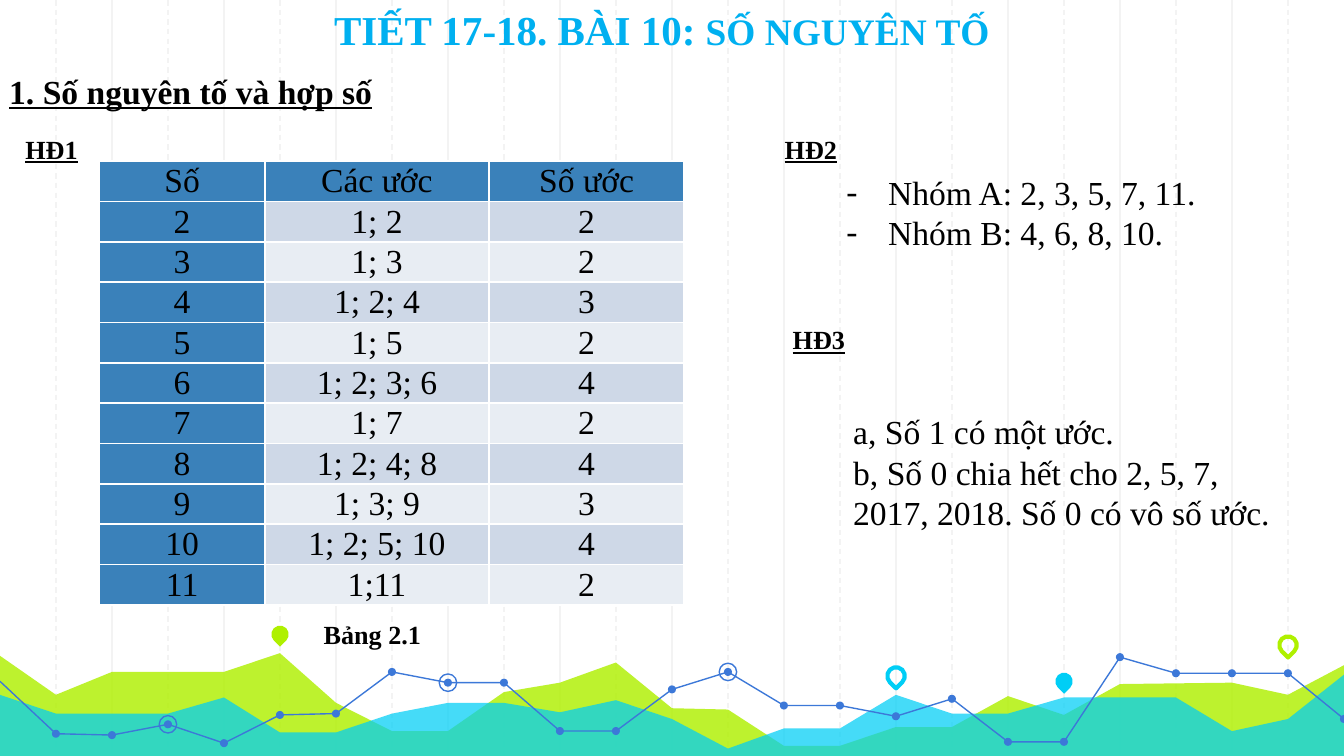
from pptx import Presentation, util as u
from pptx.dml.color import RGBColor
from pptx.enum import dml, shapes, text
from pptx.oxml import ns
from lxml import etree

WIDTH = 10
HEIGHT = WIDTH * 9 / 16
STEP = WIDTH / 24  # spacing of the vertical grid, in inches
FONT = "Times New Roman"

BLACK = RGBColor(0, 0, 0)
WHITE = RGBColor(0xFF, 0xFF, 0xFF)
GRID = RGBColor(0xF3, 0xF3, 0xF3)
LIME = RGBColor(0xAF, 0xF0, 0x00)
CYAN = RGBColor(0x00, 0xCE, 0xF6)
BLUE = RGBColor(0x3C, 0x78, 0xD8)
TITLE = RGBColor(0x00, 0xB0, 0xF0)
HEAD = RGBColor(0x3A, 0x81, 0xBA)
BANDS = RGBColor(0xE8, 0xED, 0xF3), RGBColor(0xCE, 0xD8, 0xE7)

# Content
TITLE_SPANS = [("TIẾT 17-18. BÀI 10: ", 22), ("SỐ NGUYÊN TỐ", 20)]
ROWS = [
    ("Số", "Các ước", "Số ước"),
    ("2", "1; 2", "2"), ("3", "1; 3", "2"), ("4", "1; 2; 4", "3"),
    ("5", "1; 5", "2"), ("6", "1; 2; 3; 6", "4"), ("7", "1; 7", "2"),
    ("8", "1; 2; 4; 8", "4"), ("9", "1; 3; 9", "3"),
    ("10", "1; 2; 5; 10", "4"), ("11", "1;11", "2"),
]
COLUMNS = [1.23, 1.67, 1.45]
ROW_HEIGHT = 0.3

# lines, (left, top, width, height), size, bold, underlined, bulleted
NOTES = [
    (["1. Số nguyên tố và hợp số"], (-0.03, 0.48, 3.68, 0.4), 18, True, True, False),
    (["HĐ1"], (0.09, 0.94, 0.71, 0.4), 14, True, True, False),
    (["HĐ2"], (5.74, 0.94, 0.71, 0.4), 14, True, True, False),
    (["HĐ3"], (5.8, 2.36, 0.61, 0.34), 14, True, True, False),
    (["Bảng 2.1"], (2.31, 4.55, 1.35, 0.34), 14, True, False, False),
    (["Nhóm A: 2, 3, 5, 7, 11.", "Nhóm B: 4, 6, 8, 10."],
     (6.2, 1.23, 3.07, 0.71), 18, False, False, True),
    (["a, Số 1 có một ước.",
      "b, Số 0 chia hết cho 2, 5, 7, 2017, 2018. Số 0 có vô số ước."],
     (6.25, 3.01, 3.48, 1.01), 18, False, False, False),
]

# Landscape: heights by grid step
LIME_HILLS = {0: 4.88, 1: 5.17, 2: 5, 4: 5, 5: 4.86, 6: 5.23, 7: 5.44, 8: 5.44,
              9: 5.15, 10: 5.08, 11: 4.93, 12: 5.27, 13: 5.28, 14: 5.55,
              15: 5.55, 16: 5.41, 17: 5.41, 18: 5.18, 19: 5.32, 20: 5.09,
              22: 5.08, 23: 5.17, 24: 4.95}
CYAN_HILLS = {0: 5.17, 1: 5.31, 3: 5.31, 4: 5.19, 5: 5.45, 6: 5.45, 7: 5.31,
              8: 5.23, 9: 5.23, 10: 5.3, 11: 5.21, 12: 5.35, 13: 5.57,
              14: 5.42, 15: 5.42, 16: 5.17, 17: 5.31, 18: 5.31, 19: 5.19,
              21: 5.19, 22: 5.44, 23: 5.35, 24: 5.02}
TRAIL = [5.07, 5.46, 5.47, 5.39, 5.53, 5.32, 5.31, 5, 5.08, 5.08, 5.44, 5.44,
         5.13, 5, 5.25, 5.25, 5.33, 5.2, 5.52, 5.52, 4.89, 5.01, 5.01, 5.01, 5.35]
TRAIL_BREAKS = [0, 11, 20, 24]
RINGS = [3, 8, 13]
PINS = [(5, 4.72, LIME, True), (16, 5.03, CYAN, False),
        (19, 5.07, CYAN, True), (23, 4.8, LIME, False)]


def inches(*lengths):
    return [u.Inches(length) for length in lengths]


def paint(shape, fill=None, line=None, weight=0.75):
    shape.shadow.inherit = False
    if fill is None:
        shape.fill.background()
    else:
        shape.fill.solid()
        shape.fill.fore_color.rgb = fill
    if line is None:
        shape.line.fill.background()
    else:
        shape.line.color.rgb = line
        shape.line.width = u.Pt(weight)


def add_outline(page, points, close):
    corners = [inches(*point) for point in points]
    builder = page.shapes.build_freeform(*corners[0], scale=1.0)
    builder.add_line_segments(corners[1:], close=close)
    return builder.convert_to_shape()


def add_centred(page, kind, step, y, size):
    return page.shapes.add_shape(
        kind, *inches(step * STEP - size / 2, y - size / 2, size, size))


def set_font(font, size, color=BLACK, bold=False, underline=False):
    font.name, font.size, font.bold = FONT, u.Pt(size), bold
    font.underline = underline
    font.color.rgb = color


def add_dash_bullet(para):
    properties = para._p.get_or_add_pPr()
    properties.set("marL", str(u.Inches(0.31)))
    properties.set("indent", str(-u.Inches(0.31)))
    properties.insert(0, etree.Element(ns.qn("a:buFont"), typeface=FONT))
    properties.insert(1, etree.Element(ns.qn("a:buChar"), char="-"))


def add_borders(cell):
    properties = cell._tc.get_or_add_tcPr()
    for side in ("a:lnL", "a:lnR", "a:lnT", "a:lnB"):
        line = etree.SubElement(properties, ns.qn(side), w=str(u.Pt(1)))
        solid = etree.SubElement(line, ns.qn("a:solidFill"))
        etree.SubElement(solid, ns.qn("a:srgbClr"), val=str(WHITE))


def draw_background(page):
    # Grid: even steps solid, odd steps dashed
    for step in [*range(2, 24, 2), *range(1, 24, 2)]:
        line = page.shapes.add_connector(
            shapes.MSO_CONNECTOR.STRAIGHT,
            *inches(step * STEP, 0, step * STEP, HEIGHT))
        line.line.color.rgb = GRID
        line.line.width = u.Pt(0.75)
        if step % 2:
            line.line.dash_style = dml.MSO_LINE.DASH
        etree.SubElement(line.element.spPr, ns.qn("a:effectLst"))

    # Translucent hills
    for hills, color, opacity in ((LIME_HILLS, LIME, 82), (CYAN_HILLS, CYAN, 73)):
        ridge = [(step * STEP, y) for step, y in hills.items()]
        area = add_outline(page, ridge + [(WIDTH, HEIGHT), (0, HEIGHT)], True)
        paint(area, fill=color)
        tint = area.element.spPr.find(".//" + ns.qn("a:srgbClr"))
        etree.SubElement(tint, ns.qn("a:alpha"), val=str(opacity * 1000))

    # Map pins
    for step, y, color, solid in PINS:
        pin = add_centred(page, shapes.MSO_SHAPE.TEAR, step, y, 0.13)
        pin.rotation = 135
        if solid:
            paint(pin, fill=color)
        else:
            paint(pin, line=color, weight=2.25)

    # Trail with dots and rings
    for first, last in zip(TRAIL_BREAKS, TRAIL_BREAKS[1:]):
        points = [(step * STEP, TRAIL[step]) for step in range(first, last + 1)]
        paint(add_outline(page, points, False), line=BLUE)
    for step in range(1, len(TRAIL)):
        paint(add_centred(page, shapes.MSO_SHAPE.OVAL, step, TRAIL[step], 0.06), fill=BLUE)
    for step in RINGS:
        paint(add_centred(page, shapes.MSO_SHAPE.OVAL, step, TRAIL[step], 0.13), line=BLUE)


def add_divisor_table(page):
    frame = page.shapes.add_table(
        len(ROWS), len(COLUMNS),
        *inches(0.74, 1.2, sum(COLUMNS), ROW_HEIGHT * len(ROWS)))
    table = frame.table
    for column, width in zip(table.columns, COLUMNS):
        column.width = u.Inches(width)
    for r, words in enumerate(ROWS):
        table.rows[r].height = u.Inches(ROW_HEIGHT)
        for c, word in enumerate(words):
            cell = table.cell(r, c)
            add_borders(cell)
            cell.fill.solid()
            cell.fill.fore_color.rgb = HEAD if r == 0 or c == 0 else BANDS[r % 2]
            cell.margin_left = cell.margin_right = u.Inches(0.07)
            cell.margin_top = cell.margin_bottom = 0
            cell.vertical_anchor = text.MSO_ANCHOR.MIDDLE
            para = cell.text_frame.paragraphs[0]
            para.text = word
            para.alignment = text.PP_ALIGN.CENTER
            para.space_before = u.Pt(6)
            set_font(para.font, 18)


def add_note(page, lines, place, size, bold, underline, bulleted):
    frame = page.shapes.add_textbox(*inches(*place)).text_frame
    frame.word_wrap = True
    frame.auto_size = text.MSO_AUTO_SIZE.SHAPE_TO_FIT_TEXT
    frame.text = "\n".join(lines)
    for para in frame.paragraphs:
        set_font(para.font, size, bold=bold, underline=underline)
        if bulleted:
            para.alignment = text.PP_ALIGN.JUSTIFY
            add_dash_bullet(para)


def set_title(page):
    title = page.shapes.title
    title.left, title.top, title.width, title.height = inches(0.3, -0.02, 9.25, 0.84)
    title.text_frame.vertical_anchor = text.MSO_ANCHOR.TOP
    para = title.text_frame.paragraphs[0]
    para.alignment = text.PP_ALIGN.CENTER
    for words, size in TITLE_SPANS:
        span = para.add_run()
        span.text = words
        set_font(span.font, size, TITLE, bold=True)
    title.element.getparent().append(title.element)  # bring to front


def main():
    deck = Presentation()
    deck.slide_width, deck.slide_height = inches(WIDTH, HEIGHT)
    page = deck.slides.add_slide(deck.slide_layouts[5])
    draw_background(page)
    add_divisor_table(page)
    for note in NOTES:
        add_note(page, *note)
    set_title(page)
    deck.save("out.pptx")


if __name__ == "__main__":
    main()
